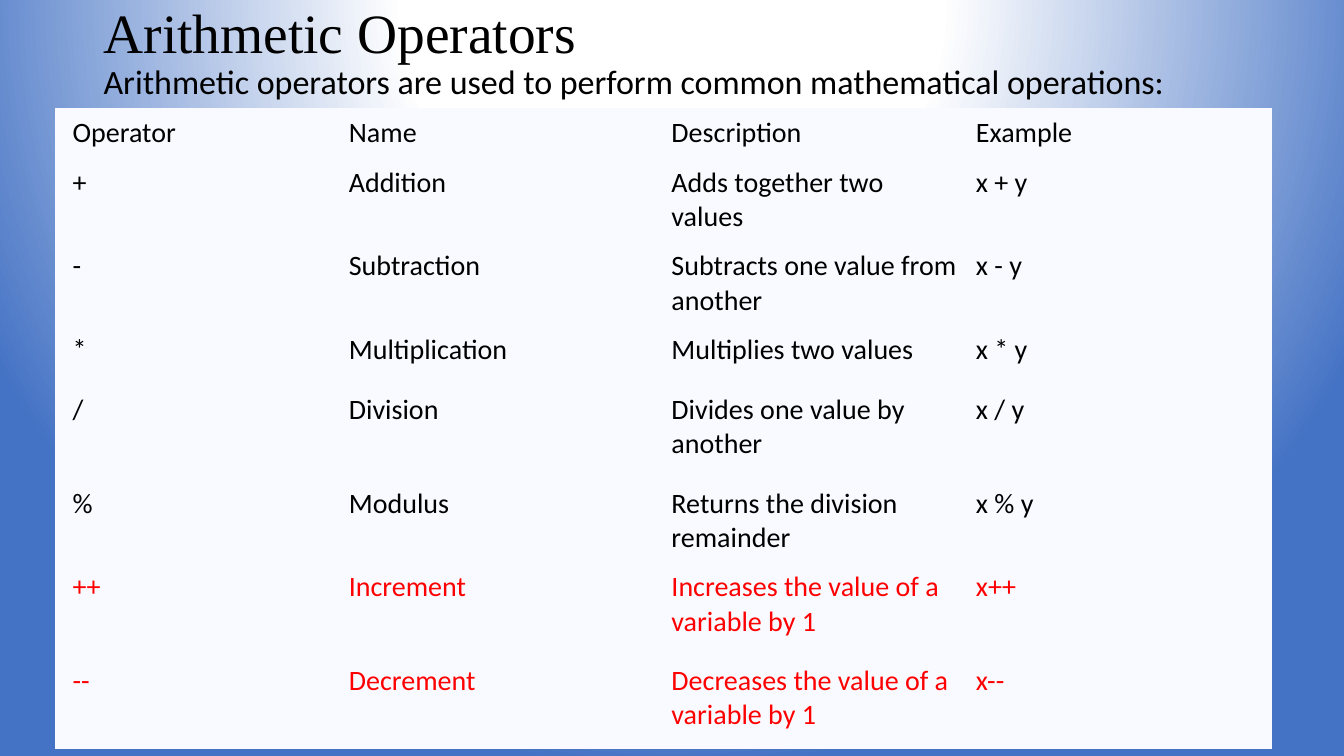
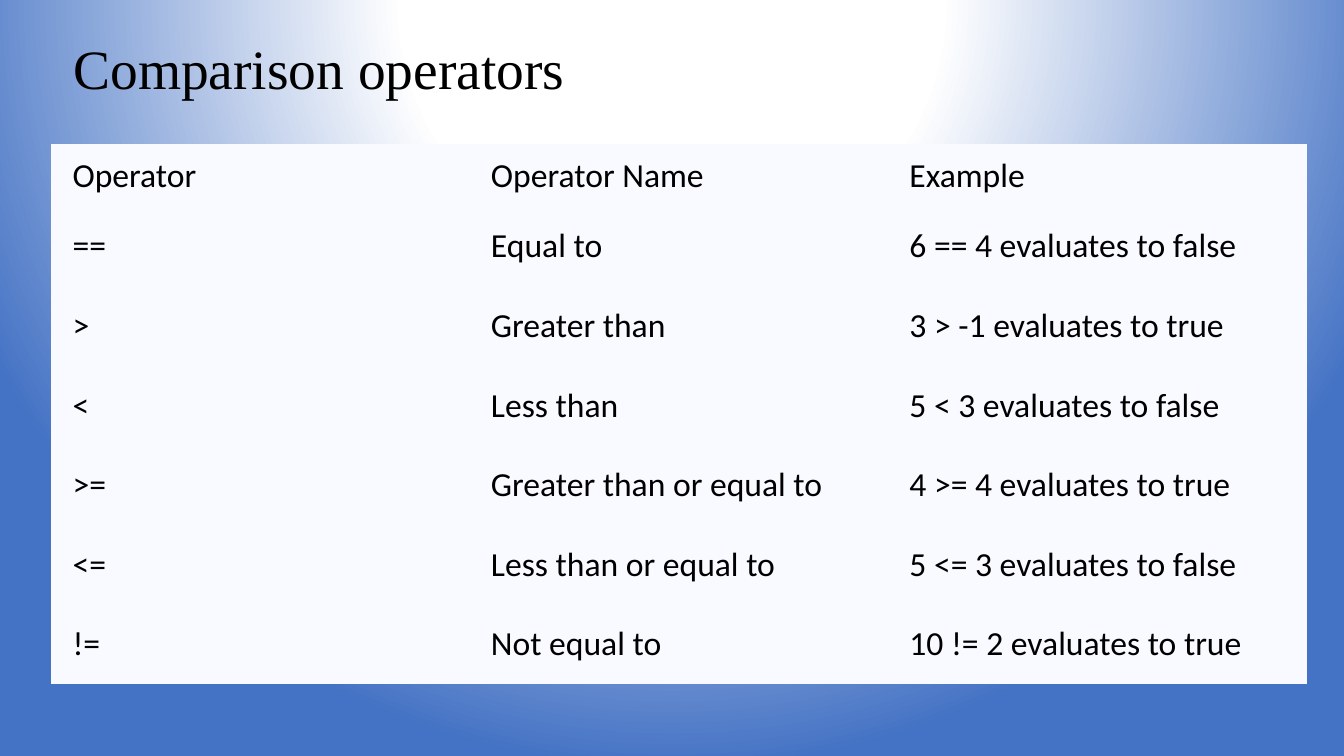
import pptx
import pptx.util
import pptx.dml.color
import pptx.enum.text
import pptx.oxml
import pptx.oxml.ns
from dataclasses import dataclass

Inches, Pt = pptx.util.Inches, pptx.util.Pt
RGB = pptx.dml.color.RGBColor.from_string
qn = pptx.oxml.ns.qn
ANCHOR = pptx.enum.text.MSO_ANCHOR


@dataclass(frozen=True)
class Theme:
    text: str = "000000"
    accent: str = "FF0000"
    cell: str = "F8FAFF"
    glow: str = "FFFFFF"
    edge: str = "4472C4"
    title_font: str = "Times New Roman"
    body_font: str = "Calibri"
    title_size: float = 39.6
    subtitle_size: float = 24.3
    title_spacing: float = 0.9
    plain_table: str = "{2D5ABB26-0587-4C30-8999-92F81FD0307C}"


T = Theme()

# Content: title lines, table rows and the measures of each slide (inches)
SLIDES = [
    dict(
        title=["Arithmetic Operators",
               "Arithmetic operators are used to perform common mathematical operations:"],
        title_box=(0.93, 0, 11.5, 1.07),
        table_at=(0.55, 1.07),
        cols=[2.83, 3.2, 3.02, 3.02],
        heights=[0.44, 0.74, 0.74, 0.6, 0.93, 0.74, 0.93, 0.93],
        size=20, anchor=ANCHOR.TOP,
        first_inset=0.17, inset=(0.08, 0.08),
        accented={"++", "--"},
        rows=[
            ("Operator", "Name", "Description", "Example"),
            ("+", "Addition", "Adds together two values", "x + y"),
            ("-", "Subtraction", "Subtracts one value from another", "x - y"),
            ("*", "Multiplication", "Multiplies two values", "x * y"),
            ("/", "Division", "Divides one value by another", "x / y"),
            ("%", "Modulus", "Returns the division remainder", "x % y"),
            ("++", "Increment", "Increases the value of a variable by 1", "x++"),
            ("--", "Decrement", "Decreases the value of a variable by 1", "x--"),
        ],
    ),
    dict(
        title=["Comparison operators"],
        title_box=(0.63, 0.42, 11.5, 0.58),
        table_at=(0.51, 1.43),
        cols=[4.15] * 3,
        heights=[0.51] + [0.79] * 6,
        size=24, anchor=ANCHOR.MIDDLE,
        first_inset=0.21, inset=(0.21, 0.11),
        accented=set(),
        rows=[
            ("Operator", "Operator Name", "Example"),
            ("==", "Equal to", "6 == 4 evaluates to false"),
            (">", "Greater than", "3 > -1 evaluates to true"),
            ("<", "Less than", "5 < 3 evaluates to false"),
            (">=", "Greater than or equal to", "4 >= 4 evaluates to true"),
            ("<=", "Less than or equal to", "5 <= 3 evaluates to false"),
            ("!=", "Not equal to", "10 != 2 evaluates to true"),
        ],
    ),
]


def set_background(master):
    """Give every slide the same radial glow from above the top edge."""
    stops = "".join(
        f'<a:gs pos="{pos * 1000}"><a:srgbClr val="{color}"/></a:gs>'
        for pos, color in [(0, T.glow), (35, T.glow), (100, T.edge)])
    bg = pptx.oxml.parse_xml(
        f'<p:bg {pptx.oxml.ns.nsdecls("p", "a")}><p:bgPr>'
        f'<a:gradFill rotWithShape="1"><a:gsLst>{stops}</a:gsLst>'
        '<a:path path="circle">'
        '<a:fillToRect l="50000" t="-80000" r="50000" b="180000"/>'
        '</a:path></a:gradFill><a:effectLst/></p:bgPr></p:bg>')
    old = master.element.find(".//" + qn("p:bg"))
    old.getparent().replace(old, bg)


def style(r, font, size, color):
    r.font.name, r.font.size = font, Pt(size)
    r.font.color.rgb = RGB(color)


def add_title(s, lines, box):
    tf = s.shapes.add_textbox(*map(Inches, box)).text_frame
    tf.word_wrap = True
    tf.vertical_anchor = ANCHOR.MIDDLE
    p = tf.paragraphs[0]
    p.text = "\v".join(lines)
    p.line_spacing = T.title_spacing
    looks = [(T.title_font, T.title_size), (T.body_font, T.subtitle_size)]
    for r, (font, size) in zip(p.runs, looks):
        style(r, font, size, T.text)


def add_table(s, d):
    rows, cols, heights = d["rows"], d["cols"], d["heights"]
    table = s.shapes.add_table(
        len(rows), len(cols), *map(Inches, d["table_at"]),
        Inches(sum(cols)), Inches(sum(heights))).table
    table.first_row = table.horz_banding = False
    table._tbl.tblPr.find(qn("a:tableStyleId")).text = T.plain_table
    for column, width in zip(table.columns, cols):
        column.width = Inches(width)
    side, upright = d["inset"]
    for i, row in enumerate(rows):
        table.rows[i].height = Inches(heights[i])
        color = T.accent if row[0] in d["accented"] else T.text
        for j, text in enumerate(row):
            cell = table.cell(i, j)
            cell.fill.solid()
            cell.fill.fore_color.rgb = RGB(T.cell)
            cell.vertical_anchor = d["anchor"]
            cell.margin_left = Inches(side if j else d["first_inset"])
            cell.margin_right = Inches(side)
            cell.margin_top = cell.margin_bottom = Inches(upright)
            cell.text_frame.text = text
            style(cell.text_frame.paragraphs[0].runs[0], T.body_font, d["size"], color)


def main():
    prs = pptx.Presentation()
    prs.slide_width, prs.slide_height = Inches(13.33), Inches(7.5)
    set_background(prs.slide_master)
    for d in SLIDES:
        s = prs.slides.add_slide(prs.slide_layouts[6])
        add_title(s, d["title"], d["title_box"])
        add_table(s, d)
    prs.save("out.pptx")


if __name__ == "__main__":
    main()
